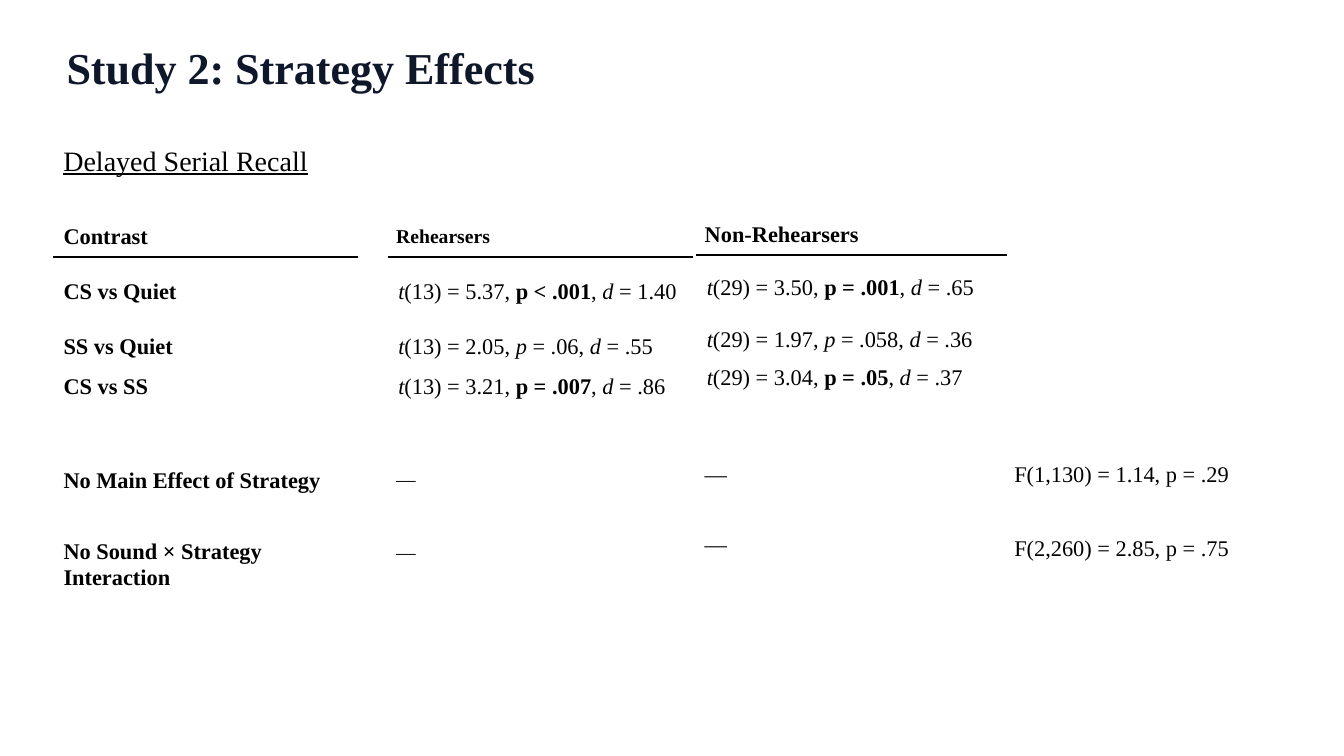
from lxml.etree import SubElement
from pptx import Presentation
from pptx.dml.color import RGBColor
from pptx.enum.text import MSO_ANCHOR, MSO_AUTO_SIZE
from pptx.oxml.ns import qn
from pptx.util import Inches, Pt

BLACK = RGBColor(0x00, 0x00, 0x00)
NAVY = RGBColor(0x0F, 0x17, 0x2A)
TIGHT = {"line": 15.8, "inset": 0.08}
LOOSE = {"line": 18.8, "bold": True}


class StatsSlide:
    """Holds the slide and its text style, and adds text boxes and one-column tables."""

    font_name = "Times New Roman"

    def __init__(self, deck):
        self.slide = deck.slides.add_slide(deck.slide_layouts[6])

    def wording(self, paragraph, runs, size, color=BLACK, bold=None, underline=None):
        font = paragraph.font
        font.name, font.size, font.color.rgb = self.font_name, Pt(size), color
        font.bold, font.underline = bold, underline
        for words, emphasis in runs:
            run = paragraph.add_run()
            run.text = words
            if emphasis == "bold":
                run.font.bold = True
            elif emphasis == "italic":
                run.font.italic = True

    def heading(self, words, left, top, width, height, size, inset=0.1, **style):
        box = self.slide.shapes.add_textbox(Inches(left), Inches(top), Inches(width), Inches(height))
        frame = box.text_frame
        frame.word_wrap = True
        frame.auto_size = MSO_AUTO_SIZE.SHAPE_TO_FIT_TEXT
        frame.margin_left = frame.margin_right = Inches(inset)
        frame.margin_top = frame.margin_bottom = Inches(inset / 2)
        self.wording(frame.paragraphs[0], [(words, None)], size, **style)

    def rule(self, cell, side):
        border = SubElement(cell._tc.get_or_add_tcPr(), qn(f"a:{side}"), w=str(Pt(1)))
        fill = SubElement(border, qn("a:solidFill"))
        SubElement(fill, qn("a:srgbClr"), val=str(BLACK))

    def entry(self, cell, runs, size=16, bold=None, line=None, inset=0.1, drop=0):
        cell.vertical_anchor = MSO_ANCHOR.MIDDLE
        cell.margin_left = cell.margin_right = Inches(inset)
        cell.margin_top = Inches(inset / 2 + drop)
        cell.margin_bottom = Inches(inset / 2)
        paragraph = cell.text_frame.paragraphs[0]
        if line:
            paragraph.line_spacing = Pt(line)
        if isinstance(runs, str):
            runs = [(runs, None)]
        self.wording(paragraph, runs, size, bold=bold)

    def column(self, left, top, width, heights, entries, ruled=False):
        frame = self.slide.shapes.add_table(len(heights), 1, Inches(left), Inches(top),
                                            Inches(width), Inches(sum(heights)))
        table = frame.table
        table.first_row = table.horz_banding = False
        for index, (height, (runs, style)) in enumerate(zip(heights, entries)):
            table.rows[index].height = Inches(height)
            cell = table.cell(index, 0)
            self.entry(cell, runs, **style)
            if ruled and index < 2:
                self.rule(cell, ("lnB", "lnT")[index])
            cell.fill.background()


def t_test(df, t, p, d, significant=True):
    p_runs = [(f"p {p}", "bold")] if significant else [("p", "italic"), (f" {p}", None)]
    runs = [("t", "italic"), (f"({df}) = {t}, ", None), *p_runs,
            (", ", None), ("d", "italic"), (f" = {d}", None)]
    return runs, {}


def main():
    deck = Presentation()
    deck.slide_width, deck.slide_height = Inches(13.33), Inches(7.5)
    study = StatsSlide(deck)

    study.heading("Study 2: Strategy Effects", 0.66, 0.4, 12.25, 0.53, 31.5,
                  inset=0, color=NAVY, bold=True)

    contrasts = ["Contrast", "CS vs Quiet", "SS vs Quiet", "CS vs SS"]
    study.column(0.53, 2.15, 3.02, [0.4, 0.69, 0.4, 0.4],
                 [(contrast, {"bold": True}) for contrast in contrasts], ruled=True)

    study.column(3.85, 2.15, 3.02, [0.4, 0.69, 0.4, 0.4, 0.99, 0.69], [
        ("Rehearsers", {**TIGHT, "size": 14, "bold": True}),
        t_test(13, "5.37", "< .001", "1.40"),
        t_test(13, "2.05", "= .06", ".55", significant=False),
        t_test(13, "3.21", "= .007", ".86"),
        ("—", {**TIGHT, "size": 14, "drop": 0.44}),
        ("—", {**TIGHT, "size": 14, "drop": 0.22}),
    ], ruled=True)

    study.column(6.91, 2.15, 3.07, [0.38, 0.65, 0.38, 0.38, 1.16, 0.65], [
        ("Non-Rehearsers", {**TIGHT, "bold": True}),
        t_test(29, "3.50", "= .001", ".65"),
        t_test(29, "1.97", "= .058", ".36", significant=False),
        t_test(29, "3.04", "= .05", ".37"),
        ("—", {**TIGHT, "drop": 0.41}),
        ("—", TIGHT),
    ], ruled=True)

    study.column(9.98, 4.58, 2.36, [0.29, 0.77], [
        ("F(1,130) = 1.14, p = .29", TIGHT),
        ("F(2,260) = 2.85, p = .75", {**TIGHT, "drop": 0.4}),
    ])

    study.column(0.53, 4.27, 3.02, [0.98, 0.69], [
        ("No Main Effect of Strategy", LOOSE),
        ("No Sound × Strategy Interaction", LOOSE),
    ])

    study.heading("Delayed Serial Recall", 0.53, 1.37, 5.44, 0.44, 20, underline=True)
    deck.save("out.pptx")


if __name__ == "__main__":
    main()
